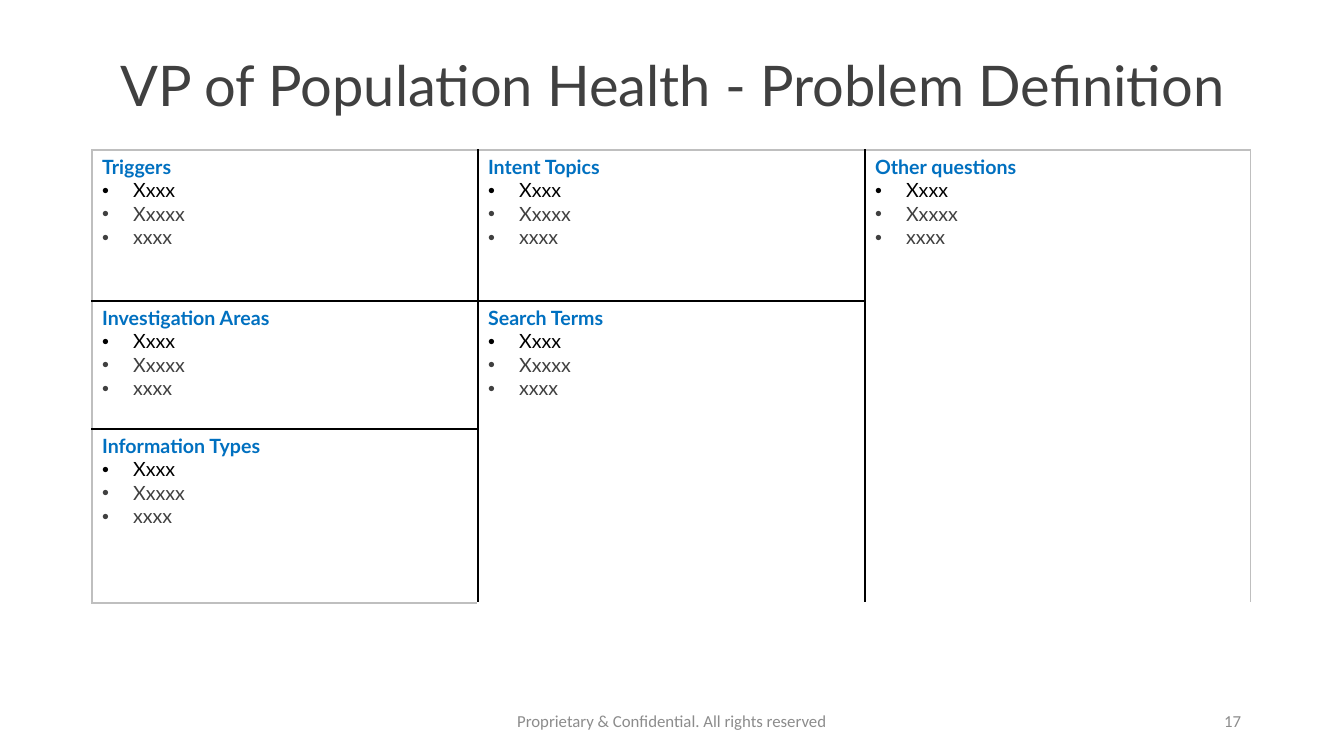
import pptx
import pptx.dml.color
import pptx.enum.text
import pptx.oxml
import pptx.oxml.ns
import pptx.util

RGBColor = pptx.dml.color.RGBColor
Align = pptx.enum.text.PP_ALIGN
Anchor = pptx.enum.text.MSO_ANCHOR

BLACK = RGBColor(0x00, 0x00, 0x00)
DARK = RGBColor(0x40, 0x40, 0x40)
BLUE = RGBColor(0x00, 0x70, 0xC0)
FOOTER_GREY = RGBColor(0x8C, 0x8C, 0x8C)
FRAME_GREY = RGBColor(0xBF, 0xBF, 0xBF)

EMU_PER_PX = 914400 / 100.8
COLUMN_WIDTHS = [386, 387, 386]
ROW_HEIGHTS = [151, 128, 174]
BULLET_INDENT = 31
ITEMS = [("Xxxx", BLACK), ("Xxxxx", DARK), ("xxxx", DARK)]
SECTIONS = [
    (0, 0, 1, "Triggers"),
    (0, 1, 1, "Intent Topics"),
    (0, 2, 3, "Other questions"),
    (1, 0, 1, "Investigation Areas"),
    (1, 1, 2, "Search Terms"),
    (2, 0, 1, "Information Types"),
]


def px(length):
    return pptx.util.Emu(round(length * EMU_PER_PX))


def place(shape, left, top, width, height):
    shape.left, shape.top = px(left), px(top)
    shape.width, shape.height = px(width), px(height)


def format_paragraph(para, font_name, size, colour, bold=False):
    for span in para.runs:
        span.font.name = font_name
        span.font.size = pptx.util.Pt(size)
        span.font.color.rgb = colour
        span.font.bold = bold


def add_bullet(para):
    properties = para._p.get_or_add_pPr()
    properties.set("marL", str(px(BULLET_INDENT)))
    properties.set("indent", str(-px(BULLET_INDENT)))
    namespace = pptx.oxml.ns.nsdecls("a")
    for element in ('a:buFont {} typeface="Arial"', 'a:buChar {} char="•"'):
        properties.append(pptx.oxml.parse_xml(f"<{element.format(namespace)}/>"))


def set_title(page, text):
    title = page.shapes.title
    place(title, 93, 40, 1159, 96)
    frame = title.text_frame
    frame.text = text
    frame.word_wrap = True
    frame.auto_size = pptx.enum.text.MSO_AUTO_SIZE.NONE
    frame.vertical_anchor = Anchor.MIDDLE
    para = frame.paragraphs[0]
    para.alignment = Align.CENTER
    para.line_spacing = 0.9
    format_paragraph(para, "Lato", 40, DARK)


def add_footer(page, text, left, width, alignment):
    box = page.shapes.add_textbox(px(left), px(701), px(width), px(40))
    frame = box.text_frame
    frame.text = text
    frame.word_wrap = True
    frame.vertical_anchor = Anchor.MIDDLE
    para = frame.paragraphs[0]
    para.alignment = alignment
    format_paragraph(para, "Calibri", 12, FOOTER_GREY)


def fill_section(cell, heading):
    frame = cell.text_frame
    frame.text = heading
    format_paragraph(frame.paragraphs[0], "Lato", 14, BLUE, True)
    for text, colour in ITEMS:
        para = frame.add_paragraph()
        para.text = text
        add_bullet(para)
        format_paragraph(para, "Lato", 14, colour)


def set_borders(table, row, column):
    cell = table.cell(row, column)
    last_row, last_column = len(ROW_HEIGHTS) - 1, len(COLUMN_WIDTHS) - 1
    edges = [("lnL", column == 0), ("lnR", column == last_column)]
    if not cell.is_spanned:
        edges.append(("lnT", row == 0))
    if row == last_row or not table.cell(row + 1, column).is_spanned:
        edges.append(("lnB", row == last_row))
    properties = cell._tc.get_or_add_tcPr()
    for position, (edge, is_outer) in enumerate(edges):
        colour = FRAME_GREY if is_outer else BLACK
        properties.insert(position, pptx.oxml.parse_xml(
            f'<a:{edge} {pptx.oxml.ns.nsdecls("a")} w="12700"><a:solidFill>'
            f'<a:srgbClr val="{colour}"/></a:solidFill></a:{edge}>'))


def add_definition_table(page):
    frame = page.shapes.add_table(
        len(ROW_HEIGHTS), len(COLUMN_WIDTHS), px(92), px(150),
        px(sum(COLUMN_WIDTHS)), px(sum(ROW_HEIGHTS)))
    table = frame.table
    table.first_row = False
    table.horz_banding = False
    for column, width in zip(table.columns, COLUMN_WIDTHS):
        column.width = px(width)
    for row, height in zip(table.rows, ROW_HEIGHTS):
        row.height = px(height)
    for row, column, row_span, heading in SECTIONS:
        cell = table.cell(row, column)
        if row_span > 1:
            cell.merge(table.cell(row + row_span - 1, column))
        fill_section(cell, heading)
    for row in range(len(ROW_HEIGHTS)):
        for column in range(len(COLUMN_WIDTHS)):
            table.cell(row, column).fill.background()
            set_borders(table, row, column)


def main():
    deck = pptx.Presentation()
    deck.slide_width, deck.slide_height = px(1344), px(756)
    page = deck.slides.add_slide(deck.slide_layouts[5])
    set_title(page, "VP of Population Health - Problem Definition")
    add_definition_table(page)
    add_footer(page, "Proprietary & Confidential. All rights reserved", 445, 454, Align.CENTER)
    add_footer(page, "17", 949, 302, Align.RIGHT)
    deck.save("out.pptx")


if __name__ == "__main__":
    main()
